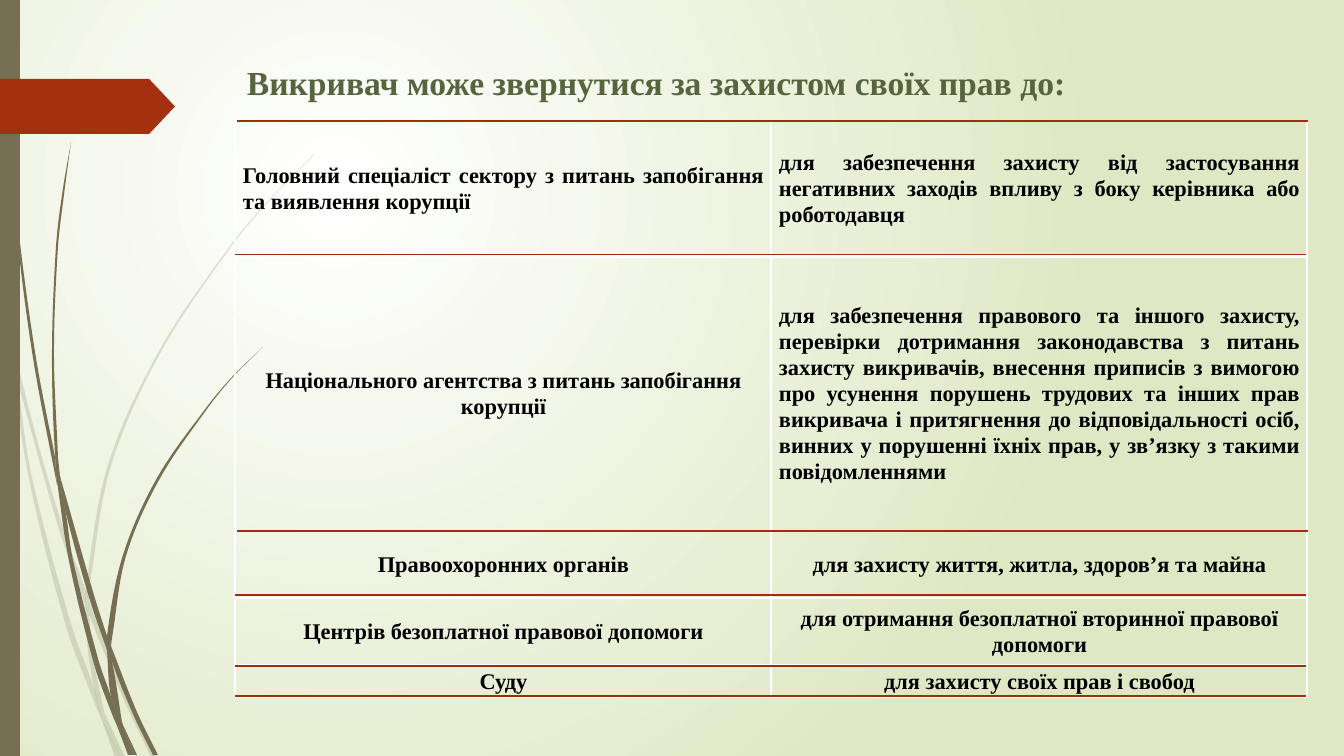
"""Builds a slide listing where a whistleblower can turn for protection of rights."""
from math import dist

from lxml.etree import SubElement
from pptx import Presentation
from pptx.dml.color import RGBColor
from pptx.enum.shapes import MSO_CONNECTOR, MSO_SHAPE
from pptx.enum.text import MSO_ANCHOR, PP_ALIGN
from pptx.oxml.ns import qn
from pptx.util import Pt

WHITE = RGBColor(0xFF, 0xFF, 0xFF)
BLACK = RGBColor(0x00, 0x00, 0x00)
PALE_GREEN = RGBColor(0xDF, 0xE8, 0xC4)
TITLE_GREEN = RGBColor(0x56, 0x65, 0x3E)
STEM_BROWN = RGBColor(0x76, 0x6F, 0x54)
ARROW_RED = RGBColor(0xA5, 0x30, 0x10)
RULE_RED = RGBColor(0x9E, 0x2E, 0x0F)
FONT = "Times New Roman"
SLIDE_WIDTH, SLIDE_HEIGHT = 1344, 756
EMU_PER_PX = 914400 / 100.8

TITLE = "Викривач може звернутися за захистом своїх прав до:"
JUSTIFY, CENTER = PP_ALIGN.JUSTIFY, PP_ALIGN.CENTER
ROWS = [
    (135, ("Головний спеціаліст сектору з питань запобігання та виявлення корупції", JUSTIFY),
     ("для забезпечення захисту від застосування негативних заходів впливу "
      "з боку керівника або роботодавця", JUSTIFY)),
    (275, ("Національного агентства з питань запобігання корупції", CENTER),
     ("для забезпечення правового та іншого захисту, перевірки дотримання законодавства "
      "з питань захисту викривачів, внесення приписів з вимогою про усунення порушень "
      "трудових та інших прав викривача і притягнення до відповідальності осіб, винних "
      "у порушенні їхніх прав, у зв’язку з такими повідомленнями", JUSTIFY)),
    (67, ("Правоохоронних органів", CENTER),
     ("для захисту життя, житла, здоров’я та майна", CENTER)),
    (67, ("Центрів безоплатної правової допомоги", CENTER),
     ("для отримання безоплатної вторинної правової допомоги", CENTER)),
    (32, ("Суду", CENTER), ("для захисту своїх прав і свобод", CENTER)),
]
TABLE_LEFT, TABLE_TOP, COLUMN_WIDTH = 235, 121, 536
RULES = [(237, 121), (235, 255), (237, 531), (235, 595), (235, 696), (235, 666)]
RULE_LENGTH = 1071

# Each blade has one edge going down and one edge coming back up.
FAINT_BLADES = [
    ([(0, 284), (9, 325), (11, 353)], [(10, 347), (0, 301)]),
    ([(17, 379), (58, 526), (85, 604)], [(86, 591), (62, 524), (36, 436), (14, 348)]),
    ([(89, 615), (124, 700), (151, 757)], [(156, 757), (128, 698), (93, 612), (89, 601)]),
    ([(106, 717), (120, 757)], [(125, 757), (106, 717)]),
    ([(11, 353), (28, 474), (66, 626), (93, 699), (102, 720)],
     [(100, 713), (94, 688), (71, 624), (31, 473), (17, 379), (11, 353)]),
    ([(85, 604), (88, 651), (94, 688), (97, 698), (106, 717)],
     [(104, 712), (92, 651), (89, 615), (85, 604)]),
    ([(314, 154), (270, 199), (230, 246), (159, 351), (108, 465), (86, 589), (89, 601)],
     [(89, 589), (111, 466), (161, 352), (231, 247), (270, 200), (314, 155)]),
    ([(102, 720), (115, 757)], [(120, 757), (102, 720)]),
    ([(86, 591), (85, 604), (89, 613)], [(89, 615), (89, 601), (86, 591)]),
    ([(94, 688), (102, 720), (120, 757)], [(106, 717), (97, 698), (94, 688)]),
]
SOLID_BLADES = [
    ([(3, 0), (4, 48), (7, 111), (17, 235), (33, 358), (57, 485)],
     [(55, 457), (36, 358), (19, 234), (8, 110), (5, 48), (4, 0)]),
    ([(60, 476), (65, 509), (89, 597), (107, 650)], [(107, 636), (94, 595), (60, 476)]),
    ([(111, 646), (112, 661), (133, 714), (153, 755)], [(158, 755), (137, 712), (111, 646)]),
    ([(57, 481), (69, 561), (94, 664), (112, 714), (118, 728)],
     [(117, 723), (111, 697), (99, 662), (73, 560), (65, 509), (57, 481)]),
    ([(71, 142), (62, 195), (56, 247), (52, 352), (55, 453), (60, 476)],
     [(58, 457), (54, 352), (58, 247), (64, 195), (71, 142)]),
    ([(123, 725), (134, 755)], [(137, 755), (123, 725)]),
    ([(55, 453), (57, 481), (65, 509)], [(60, 476), (55, 453)]),
    ([(263, 347), (233, 376), (206, 408), (157, 478), (123, 555), (107, 636), (111, 646)],
     [(112, 638), (126, 556), (159, 480), (207, 409), (233, 377), (263, 347)]),
    ([(118, 728), (128, 755)], [(132, 755), (118, 728)]),
    ([(107, 650), (111, 697), (123, 725)], [(122, 722), (112, 661), (107, 650)]),
    ([(107, 636), (107, 650), (110, 656)], [(112, 661), (111, 646), (107, 636)]),
    ([(111, 697), (118, 728), (131, 755)], [(134, 755), (123, 725), (111, 697)]),
]


def px(length):
    return round(length * EMU_PER_PX)


def box(*lengths):
    return [px(length) for length in lengths]


def paint(shape, color):
    shape.shadow.inherit = False
    shape.fill.solid()
    shape.fill.fore_color.rgb = color
    shape.line.fill.background()


def control_point(before, point, after, reach):
    """Moves a point along the chord of its two neighbours."""
    scale = reach / (dist(before, point) + dist(point, after)) / 3
    return [p + (a - b) * scale for b, p, a in zip(before, point, after)]


def curve_points(edge):
    """Gives two control points and an end point for each step of an edge."""
    padded = [edge[0], *edge, edge[-1]]
    points = []
    for before, start, end, after in zip(padded, padded[1:], padded[2:], padded[3:]):
        length = dist(start, end)
        points += [control_point(before, start, end, length),
                   control_point(after, end, start, length), end]
    return points


def add_blades(slide, blades, opacity=None):
    group = slide.shapes.add_group_shape()
    for down, up in blades:
        turn = [down[-1], up[0], up[0]]
        vertices = curve_points(down) + turn + curve_points(up)
        builder = group.shapes.build_freeform(*box(*down[0]))
        builder.add_line_segments([box(*vertex) for vertex in vertices], close=True)
        blade = builder.convert_to_shape()
        lines = list(blade._element.iter(qn("a:lnTo")))
        for first, second, third in zip(lines[::3], lines[1::3], lines[2::3]):
            first.tag = qn("a:cubicBezTo")
            for line in (second, third):
                first.append(line[0])
                line.getparent().remove(line)
        paint(blade, STEM_BROWN)
        if opacity:
            color = blade._element.spPr.find(".//" + qn("a:srgbClr"))
            SubElement(color, qn("a:alpha"), val=str(opacity * 1000))


def set_background(slide):
    fill = slide.background.fill
    fill.gradient()
    for stop, color in zip(fill.gradient_stops, (WHITE, PALE_GREEN)):
        stop.color.rgb = color
    gradient = slide.element.find(".//" + qn("a:gradFill"))
    gradient.remove(gradient.find(qn("a:lin")))
    circle = SubElement(gradient, qn("a:path"), path="circle")
    SubElement(circle, qn("a:fillToRect"), l="50000", t="50000", r="100000", b="100000")


def write(paragraph, text, size, color):
    paragraph.text = text
    font = paragraph.font
    font.name, font.size, font.bold = FONT, Pt(size), True
    font.color.rgb = color


def set_borders(cell, bottom_width):
    properties = cell._tc.get_or_add_tcPr()
    for side, width in (("L", 1), ("R", 1), ("T", 1), ("B", bottom_width)):
        border = SubElement(properties, qn("a:ln" + side), w=str(Pt(width)))
        SubElement(SubElement(border, qn("a:solidFill")), qn("a:srgbClr"), val=str(WHITE))


def add_bodies_table(slide):
    height = sum(row[0] for row in ROWS)
    table = slide.shapes.add_table(
        len(ROWS), 2, *box(TABLE_LEFT, TABLE_TOP, 2 * COLUMN_WIDTH, height)).table
    table.first_row = table.horz_banding = False
    for row_index, (row_height, *entries) in enumerate(ROWS):
        table.rows[row_index].height = px(row_height)
        for column_index, (text, alignment) in enumerate(entries):
            cell = table.cell(row_index, column_index)
            cell.vertical_anchor = MSO_ANCHOR.MIDDLE
            cell.margin_left, cell.margin_right = box(8, 7)
            cell.margin_top = cell.margin_bottom = 0
            set_borders(cell, 3 if row_index == 0 else 1)
            cell.fill.background()
            paragraph = cell.text_frame.paragraphs[0]
            write(paragraph, text, 16, BLACK)
            paragraph.alignment, paragraph.line_spacing = alignment, 1.05


def main():
    presentation = Presentation()
    presentation.slide_width, presentation.slide_height = box(SLIDE_WIDTH, SLIDE_HEIGHT)
    slide = presentation.slides.add_slide(presentation.slide_layouts[6])
    set_background(slide)
    add_blades(slide, FAINT_BLADES, opacity=20)
    add_blades(slide, SOLID_BLADES)
    shapes = slide.shapes
    paint(shapes.add_shape(MSO_SHAPE.RECTANGLE, *box(0, 0, 20, SLIDE_HEIGHT)), STEM_BROWN)
    arrow = shapes.add_shape(MSO_SHAPE.PENTAGON, *box(0, 79, 175, 55))
    arrow.adjustments[0] = 0.47
    paint(arrow, ARROW_RED)
    title_frame = shapes.add_textbox(*box(237, 56, 1031, 64)).text_frame
    title_frame.word_wrap, title_frame.margin_top = True, px(6)
    write(title_frame.paragraphs[0], TITLE, 24, TITLE_GREEN)
    add_bodies_table(slide)
    for left, y in RULES:
        rule = shapes.add_connector(MSO_CONNECTOR.STRAIGHT, *box(left, y, left + RULE_LENGTH, y))
        rule.line.color.rgb, rule.line.width = RULE_RED, Pt(0.75)
        SubElement(rule._element.spPr, qn("a:effectLst"))
    presentation.save("out.pptx")


if __name__ == "__main__":
    main()
